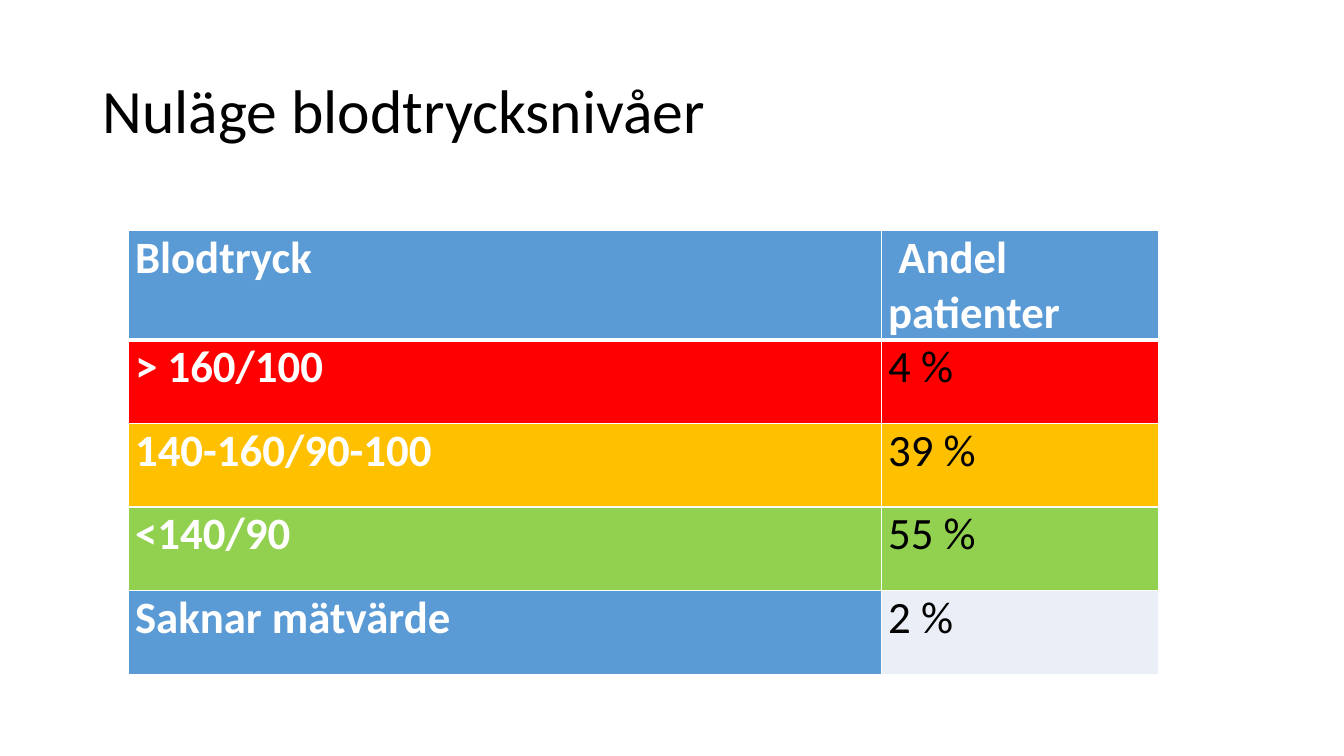
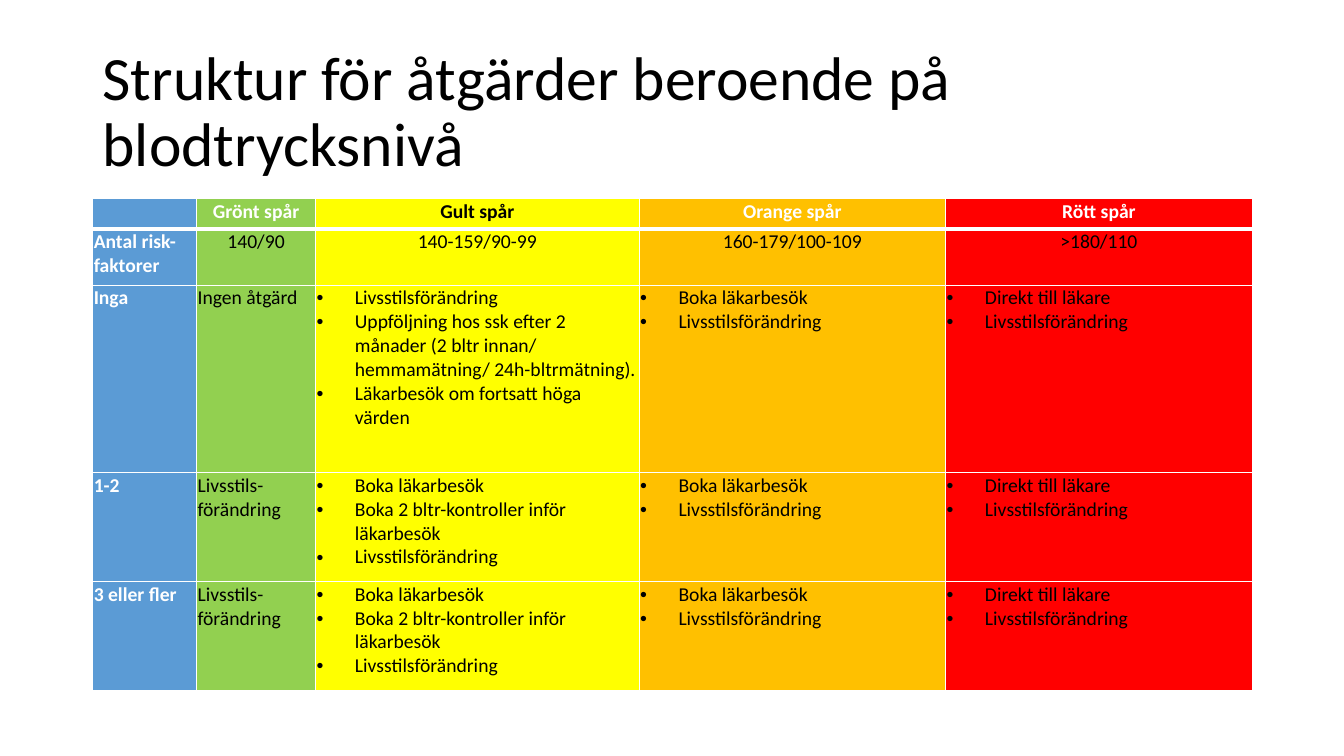
"""Build two slides on blood pressure levels and the measures they call for."""
from dataclasses import dataclass

from pptx import Presentation
from pptx.dml.color import RGBColor
from pptx.enum.text import MSO_ANCHOR, PP_ALIGN
from pptx.oxml.xmlchemy import OxmlElement
from pptx.util import Inches, Pt

LEFT, CENTER = PP_ALIGN.LEFT, PP_ALIGN.CENTER
MIDDLE = MSO_ANCHOR.MIDDLE


@dataclass(frozen=True)
class Theme:
    """Colours, type and border sizes shared by the slides."""
    font: str = "Calibri"
    black: str = "000000"
    white: str = "FFFFFF"
    blue: str = "5B9BD5"
    pale: str = "EAEFF7"
    green: str = "92D050"
    yellow: str = "FFFF00"
    orange: str = "FFC000"
    red: str = "FF0000"
    title_size: int = 44
    level_size: int = 32
    action_size: int = 14
    border: int = 1
    header_border: int = 3
    bullet_indent: float = 0.38


THEME = Theme()


@dataclass(frozen=True)
class Cell:
    """One table cell: its lines, colours and paragraph format."""
    lines: tuple[str, ...]
    fill: str
    color: str = THEME.black
    bold: bool = False
    align: PP_ALIGN = LEFT
    bulleted: bool = False


@dataclass(frozen=True)
class TableLayout:
    """Place, grid and text measures of a table, in inches and points."""
    left: float
    top: float
    columns: tuple[float, ...]
    rows: tuple[float, ...]
    margin_x: float
    margin_y: float
    size: int


@dataclass(frozen=True)
class Track:
    """A column of measures for one blood pressure range."""
    name: str
    level: str
    fill: str
    name_color: str
    actions: tuple[tuple[str, ...], ...]
    bulleted: bool = True


LEVEL_LAYOUT = TableLayout(1.27, 2.29, (7.47, 2.75), (1.08,) + (0.83,) * 4,
                           0.07, 0, THEME.level_size)
ACTION_LAYOUT = TableLayout(0.92, 1.97, (1.03, 1.18, 3.21, 3.04, 3.04),
                            (0.3, 0.56, 1.86, 1.08, 1.08),
                            0.01, 0.01, THEME.action_size)

LEVELS = (
    ("> 160/100", "4 %", THEME.red, THEME.red),
    ("140-160/90-100", "39 %", THEME.orange, THEME.orange),
    ("<140/90", "55 %", THEME.green, THEME.green),
    ("Saknar mätvärde", "2 %", THEME.blue, THEME.pale),
)

LIFESTYLE = "Livsstilsförändring"
BOOK_DOCTOR = "Boka läkarbesök"
CHECKS = (BOOK_DOCTOR, "Boka 2 bltr-kontroller inför läkarbesök", LIFESTYLE)
FOLLOW_UP = (
    LIFESTYLE,
    "Uppföljning hos ssk efter 2 månader "
    "(2 bltr innan/ hemmamätning/ 24h-bltrmätning).",
    "Läkarbesök om fortsatt höga värden",
)
RISK_LABELS = ("", "Antal risk-faktorer", "Inga", "1-2", "3 eller fler")
TRACKS = (
    Track("Grönt spår", "140/90", THEME.green, THEME.white,
          (("Ingen åtgärd",),) + (("Livsstils-förändring",),) * 2, False),
    Track("Gult spår", "140-159/90-99", THEME.yellow, THEME.black,
          (FOLLOW_UP, CHECKS, CHECKS)),
    Track("Orange spår", "160-179/100-109", THEME.orange, THEME.white,
          ((BOOK_DOCTOR, LIFESTYLE),) * 3),
    Track("Rött spår", ">180/110", THEME.red, THEME.white,
          (("Direkt till läkare", LIFESTYLE),) * 3),
)


def add_bullet(paragraph) -> None:
    """Give the paragraph a round bullet and a hanging indent."""
    properties = paragraph._p.get_or_add_pPr()
    indent = Inches(THEME.bullet_indent)
    properties.set("marL", str(indent))
    properties.set("indent", str(-indent))
    font = OxmlElement("a:buFont")
    font.set("typeface", "Arial")
    bullet = OxmlElement("a:buChar")
    bullet.set("char", "•")
    properties.extend((font, bullet))


def write_text(frame, lines: tuple[str, ...], *, size: int,
               color: str = THEME.black, bold: bool = False,
               align: PP_ALIGN = LEFT, bulleted: bool = False,
               line_spacing: float = 1.0) -> None:
    """Write each line as a formatted paragraph of the text frame."""
    for index, line in enumerate(lines):
        paragraph = frame.paragraphs[0] if index == 0 else frame.add_paragraph()
        paragraph.alignment = align
        paragraph.line_spacing = line_spacing
        if bulleted:
            add_bullet(paragraph)
        if not line:
            end = OxmlElement("a:endParaRPr")
            end.set("sz", str(size * 100))
            paragraph._p.append(end)
            continue
        run = paragraph.add_run()
        run.text = line
        run.font.name = THEME.font
        run.font.size = Pt(size)
        run.font.bold = bold
        run.font.color.rgb = RGBColor.from_string(color)


def set_borders(cell, *, top: int, bottom: int) -> None:
    """Draw white borders on the four sides of a cell."""
    widths = {"L": THEME.border, "R": THEME.border, "T": top, "B": bottom}
    for side, width in widths.items():
        line = OxmlElement(f"a:ln{side}")
        line.set("w", str(Pt(width)))
        fill = OxmlElement("a:solidFill")
        color = OxmlElement("a:srgbClr")
        color.set("val", THEME.white)
        fill.append(color)
        line.append(fill)
        cell._tc.get_or_add_tcPr().append(line)


def draw_cell(target, cell: Cell, layout: TableLayout, row: int) -> None:
    """Format a table cell and write its text."""
    target.margin_left = target.margin_right = Inches(layout.margin_x)
    target.margin_top = target.margin_bottom = Inches(layout.margin_y)
    set_borders(target,
                top=THEME.header_border if row == 1 else THEME.border,
                bottom=THEME.header_border if row == 0 else THEME.border)
    target.fill.solid()
    target.fill.fore_color.rgb = RGBColor.from_string(cell.fill)
    write_text(target.text_frame, cell.lines, size=layout.size,
               color=cell.color, bold=cell.bold, align=cell.align,
               bulleted=cell.bulleted)


def draw_table(slide, layout: TableLayout, rows: list[list[Cell]]) -> None:
    """Add a table with the given layout and cells."""
    table = slide.shapes.add_table(
        len(layout.rows), len(layout.columns),
        Inches(layout.left), Inches(layout.top),
        Inches(sum(layout.columns)), Inches(sum(layout.rows))).table
    table.horz_banding = False
    for column, width in zip(table.columns, layout.columns):
        column.width = Inches(width)
    for row, height in zip(table.rows, layout.rows):
        row.height = Inches(height)
    for row_index, cells in enumerate(rows):
        for column_index, cell in enumerate(cells):
            draw_cell(table.cell(row_index, column_index), cell, layout, row_index)


def heading(text: str, fill: str = THEME.blue, color: str = THEME.white,
            align: PP_ALIGN = LEFT) -> Cell:
    """Return a bold heading cell."""
    return Cell((text,), fill, color, True, align)


def level_rows() -> list[list[Cell]]:
    """Return the cells of the blood pressure share table."""
    rows = [[heading("Blodtryck"), heading(" Andel patienter")]]
    for label, share, label_fill, share_fill in LEVELS:
        rows.append([heading(label, label_fill), Cell((share,), share_fill)])
    return rows


def track_cells(track: Track) -> list[Cell]:
    """Return the cells of one track from top to bottom."""
    return [
        heading(track.name, track.fill, track.name_color, CENTER),
        Cell((track.level,), track.fill, align=CENTER),
        *(Cell(lines, track.fill, bulleted=track.bulleted)
          for lines in track.actions),
    ]


def action_rows() -> list[list[Cell]]:
    """Return the cells of the measures table."""
    columns = [[heading(label) for label in RISK_LABELS]]
    columns.extend(track_cells(track) for track in TRACKS)
    return [list(row) for row in zip(*columns)]


def add_titled_slide(presentation, title: str):
    """Add a blank slide with a title."""
    slide = presentation.slides.add_slide(presentation.slide_layouts[6])
    frame = slide.shapes.add_textbox(
        Inches(0.92), Inches(0.4), Inches(11.5), Inches(1.45)).text_frame
    frame.word_wrap = True
    frame.vertical_anchor = MIDDLE
    write_text(frame, (title,), size=THEME.title_size, line_spacing=0.9)
    return slide


def main() -> None:
    """Build and save the presentation."""
    presentation = Presentation()
    presentation.slide_width = Inches(13.33)
    presentation.slide_height = Inches(7.5)
    slide = add_titled_slide(presentation, "Nuläge blodtrycksnivåer")
    draw_table(slide, LEVEL_LAYOUT, level_rows())
    slide = add_titled_slide(
        presentation, "Struktur för åtgärder beroende på blodtrycksnivå")
    draw_table(slide, ACTION_LAYOUT, action_rows())
    presentation.save("out.pptx")


if __name__ == "__main__":
    main()
